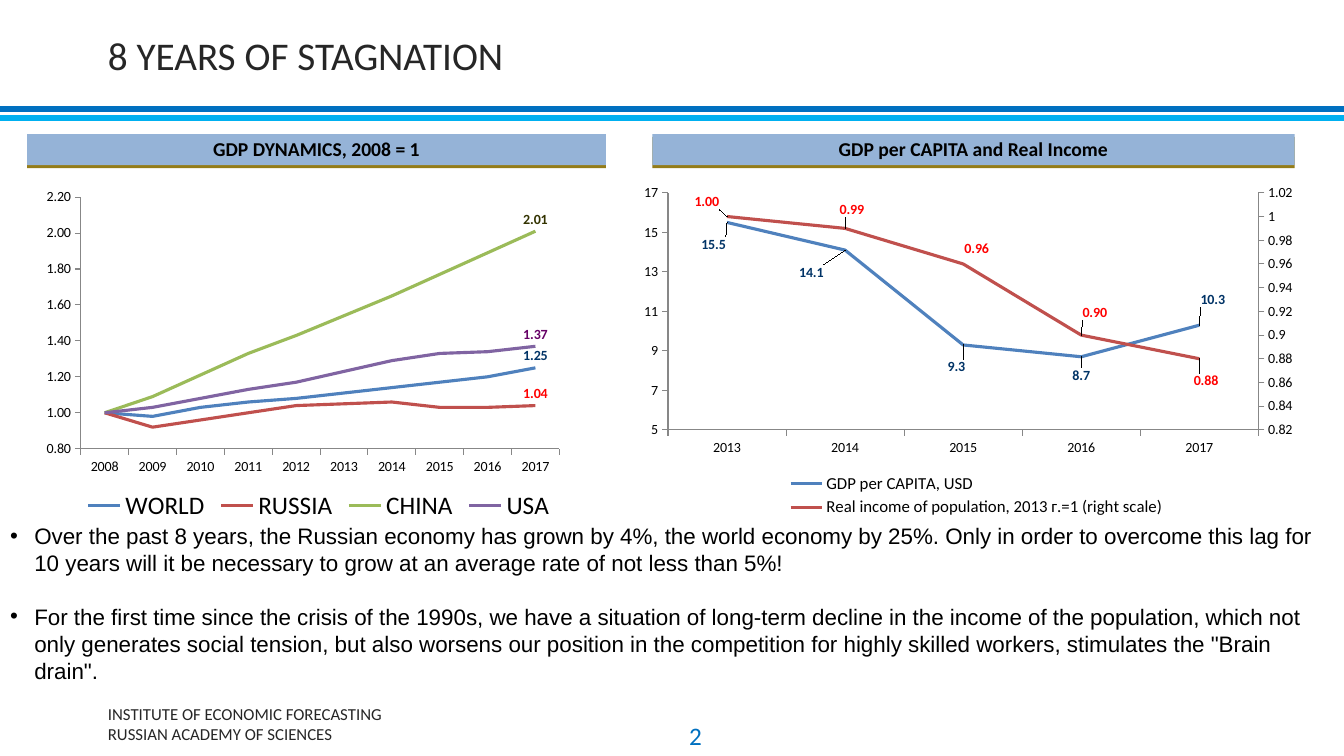
from copy import deepcopy
from dataclasses import dataclass

from lxml.etree import SubElement
from pptx import Presentation
from pptx.chart.data import CategoryChartData
from pptx.dml.color import RGBColor
from pptx.enum.chart import XL_CHART_TYPE, XL_LABEL_POSITION, XL_LEGEND_POSITION, XL_TICK_MARK
from pptx.enum.shapes import MSO_CONNECTOR, MSO_SHAPE
from pptx.enum.text import MSO_ANCHOR, PP_ALIGN
from pptx.oxml import parse_xml
from pptx.oxml.ns import qn
from pptx.util import Inches, Pt


@dataclass(frozen=True)
class Theme:
    heading_font: str = "Calibri"
    body_font: str = "Arial"
    ink: str = "000000"
    heading: str = "262626"
    rule: str = "0070C0"
    second_rule: str = "00B0F0"
    banner: str = "95B3D7"
    banner_edge: str = "947C18"
    axis: str = "878787"
    title_size: int = 28
    body_size: int = 16
    banner_size: int = 14
    footer_size: int = 12
    number_size: int = 18
    chart_size: int = 10


THEME = Theme()
ABOVE, BELOW = XL_LABEL_POSITION.ABOVE, XL_LABEL_POSITION.BELOW


@dataclass(frozen=True)
class Label:
    point: int
    position: XL_LABEL_POSITION = ABOVE
    shift_x: float = 0
    shift_y: float = 0


@dataclass(frozen=True)
class Line:
    name: str
    values: tuple
    color: str
    label_color: str
    labels: tuple
    number_format: str = "0.00"


@dataclass(frozen=True)
class Scale:
    minimum: float
    maximum: float
    step: float
    number_format: str = "General"


@dataclass(frozen=True)
class Panel:
    heading: str
    banner: tuple
    area: tuple
    plot: dict
    legend: dict | None
    legend_size: int
    first_year: int
    lines: tuple
    scale: Scale
    right_scale: Scale | None = None
    crossing: str = "between"


LAST_YEAR = (Label(9),)
PANELS = (
    Panel(
        "GDP DYNAMICS, 2008 = 1", (0.27, 1.33, 5.74, 0.31), (0.29, 1.78, 5.74, 3.44),
        dict(x=0.089, y=0.051, w=0.827, h=0.726), None, 18, 2008,
        (
            Line("WORLD", (1, 0.98, 1.03, 1.06, 1.08, 1.11, 1.14, 1.17, 1.2, 1.25), "4F81BD", "003366", LAST_YEAR),
            Line("RUSSIA", (1, 0.92, 0.96, 1, 1.04, 1.05, 1.06, 1.03, 1.03, 1.04), "C0504D", "FF0000", LAST_YEAR),
            Line("CHINA", (1, 1.09, 1.21, 1.33, 1.43, 1.54, 1.65, 1.77, 1.89, 2.01), "9BBB59", "333300", LAST_YEAR),
            Line("USA", (1, 1.03, 1.08, 1.13, 1.17, 1.23, 1.29, 1.33, 1.34, 1.37), "8064A2", "660066", LAST_YEAR),
        ),
        Scale(0.8, 2.2, 0.2, "0.00"), crossing="midCat",
    ),
    Panel(
        "GDP per CAPITA and Real Income", (6.47, 1.33, 6.37, 0.31), (6.27, 1.76, 6.7, 3.41),
        dict(x=0.053, y=0.045, w=0.874, h=0.69), dict(x=0.21, y=0.85, w=0.6, h=0.15), 12, 2013,
        (
            Line("GDP per CAPITA, USD", (15.5, 14.1, 9.3, 8.7, 10.3), "4F81BD", "003366",
                 (Label(0, BELOW, -0.02, 0.03), Label(1, BELOW, -0.05, 0.03), Label(2, BELOW, -0.01, 0.03),
                  Label(3, BELOW, 0, 0.02), Label(4, ABOVE, 0.02, -0.04)), "General"),
            Line("Real income of population, 2013 г.=1 (right scale)", (1, 0.99, 0.96, 0.9, 0.88), "C0504D", "FF0000",
                 (Label(0, ABOVE, -0.03, -0.01), Label(1, ABOVE, 0.01, -0.02), Label(2, ABOVE, 0.02, -0.01),
                  Label(3, ABOVE, 0.02, -0.03), Label(4, BELOW, 0.01, 0.03))),
        ),
        Scale(5, 17, 2), Scale(0.82, 1.02, 0.02),
    ),
)
BULLETS = (
    "Over the past 8 years, the Russian economy has grown by 4%, the world economy by 25%. Only in order to "
    "overcome this lag for 10 years will it be necessary to grow at an average rate of not less than 5%!",
    "For the first time since the crisis of the 1990s, we have a situation of long-term decline in the income of "
    "the population, which not only generates social tension, but also worsens our position in the competition for "
    "highly skilled workers, stimulates the \"Brain drain\".",
)


def format_font(font, size: float, color: str, name: str = THEME.heading_font, bold: bool = False) -> None:
    font.size, font.name, font.bold = Pt(size), name, bold
    font.color.rgb = RGBColor.from_string(color)


def write_text(box, text: str, *, size: float, color: str, font: str = THEME.heading_font, bold: bool = False,
               align=PP_ALIGN.LEFT, anchor=MSO_ANCHOR.MIDDLE, insets: tuple = (0, 0, 0, 0),
               bullet: bool = False, gap: float = 0) -> None:
    frame = box.text_frame
    frame.word_wrap, frame.vertical_anchor = True, anchor
    frame.margin_left, frame.margin_top, frame.margin_right, frame.margin_bottom = map(Inches, insets)
    frame.text = text
    for index, para in enumerate(frame.paragraphs):
        para.alignment, para.space_before = align, Pt(gap if index else 0)
        if bullet:
            properties = para._p.get_or_add_pPr()
            properties.set("marL", str(Inches(0.24)))
            properties.set("indent", str(-Inches(0.24)))
            SubElement(properties, qn("a:buChar"), char="•")
        for span in para.runs:
            format_font(span.font, size, color, font, bold)


def move(box, left: float, top: float, width: float, height: float) -> None:
    box.left, box.top, box.width, box.height = map(Inches, (left, top, width, height))


def add_rule(page, top: float, color: str) -> None:
    rule = page.shapes.add_connector(MSO_CONNECTOR.STRAIGHT, 0, Inches(top), Inches(13.33), Inches(top))
    rule.line.width, rule.line.color.rgb = Pt(4), RGBColor.from_string(color)
    SubElement(rule._element.spPr, qn("a:effectLst"))


def add_banner(page, panel: Panel) -> None:
    banner = page.shapes.add_shape(MSO_SHAPE.RECTANGLE, *map(Inches, panel.banner))
    banner.fill.solid()
    banner.fill.fore_color.rgb = RGBColor.from_string(THEME.banner)
    banner.line.fill.background()
    effects = SubElement(banner._element.spPr, qn("a:effectLst"))
    shadow = SubElement(effects, qn("a:outerShdw"), dist=str(Pt(2)), dir="5400000", algn="ctr", rotWithShape="0")
    SubElement(shadow, qn("a:srgbClr"), val=THEME.banner_edge)
    write_text(banner, panel.heading, size=THEME.banner_size, color=THEME.ink, bold=True,
               align=PP_ALIGN.CENTER, insets=(0.08, 0.03, 0.08, 0.05))


def set_layout(parent, index: int, settings: dict) -> None:
    for previous in parent.findall(qn("c:layout")):
        parent.remove(previous)
    layout = parse_xml('<c:layout xmlns:c="http://schemas.openxmlformats.org/drawingml/2006/chart"/>')
    manual = SubElement(layout, qn("c:manualLayout"))
    for key, value in settings.items():
        SubElement(manual, qn(f"c:{key}"), val=str(value))
    parent.insert(index, layout)


def format_line(series, line: Line) -> None:
    series.smooth = False
    series.format.line.width = Pt(2.25)
    series.format.line.color.rgb = RGBColor.from_string(line.color)
    series.data_labels.show_value = len(line.labels) == len(line.values)
    format_font(series.data_labels.font, THEME.chart_size, line.label_color, bold=True)
    for label in line.labels:
        data_label = series.points[label.point].data_label
        format_font(data_label.font, THEME.chart_size, line.label_color, bold=True)
        data_label.position = label.position
        element = series._element.xpath(f"c:dLbls/c:dLbl[c:idx/@val='{label.point}']")[0]
        set_layout(element, 1, dict(x=label.shift_x, y=label.shift_y))


def add_right_axis(plot_area, scale: Scale) -> None:
    left_plot = plot_area.find(qn("c:lineChart"))
    right_plot = deepcopy(left_plot)
    left_plot.remove(left_plot.findall(qn("c:ser"))[1])
    right_plot.remove(right_plot.find(qn("c:ser")))
    left_plot.addnext(right_plot)
    category, value = (plot_area.find(qn(f"c:{name}")) for name in ("catAx", "valAx"))
    right_category, right_value = deepcopy(category), deepcopy(value)
    value.addnext(right_value)
    right_value.addnext(right_category)
    for reference, number in zip(right_plot.findall(qn("c:axId")), ("5001", "5002")):
        reference.set("val", number)
    for axis, number, other in ((right_category, "5001", "5002"), (right_value, "5002", "5001")):
        axis.find(qn("c:axId")).set("val", number)
        axis.find(qn("c:crossAx")).set("val", other)
    right_category.find(qn("c:delete")).set("val", "1")
    for query, setting in (("c:axPos", "r"), ("c:crosses", "max"), ("c:scaling/c:min", scale.minimum),
                           ("c:scaling/c:max", scale.maximum), ("c:majorUnit", scale.step)):
        right_value.xpath(query)[0].set("val", str(setting))


def add_line_chart(page, panel: Panel) -> None:
    data = CategoryChartData()
    data.categories = [str(panel.first_year + index) for index in range(len(panel.lines[0].values))]
    for line in panel.lines:
        data.add_series(line.name, line.values, line.number_format)
    chart = page.shapes.add_chart(XL_CHART_TYPE.LINE, *map(Inches, panel.area), data).chart
    format_font(chart.font, THEME.chart_size, THEME.ink)
    chart.has_title = False
    chart.plots[0].vary_by_categories = False
    for series, line in zip(chart.plots[0].series, panel.lines):
        format_line(series, line)
    for axis in (chart.category_axis, chart.value_axis):
        axis.has_major_gridlines = False
        axis.major_tick_mark, axis.minor_tick_mark = XL_TICK_MARK.OUTSIDE, XL_TICK_MARK.NONE
        axis.format.line.color.rgb = RGBColor.from_string(THEME.axis)
        format_font(axis.tick_labels.font, THEME.chart_size, THEME.ink)
    axis, scale = chart.value_axis, panel.scale
    axis.minimum_scale, axis.maximum_scale, axis.major_unit = scale.minimum, scale.maximum, scale.step
    axis.tick_labels.number_format, axis.tick_labels.number_format_is_linked = scale.number_format, False
    plot_area = chart._chartSpace.chart.plotArea
    for crossing in plot_area.xpath("c:valAx/c:crossBetween"):
        crossing.set("val", panel.crossing)
    set_layout(plot_area, 0, dict(layoutTarget="inner", xMode="edge", yMode="edge") | panel.plot)
    chart.has_legend = True
    chart.legend.position, chart.legend.include_in_layout = XL_LEGEND_POSITION.BOTTOM, False
    format_font(chart.legend.font, panel.legend_size, THEME.ink)
    if panel.legend:
        set_layout(chart.legend._element, 1, dict(xMode="edge", yMode="edge") | panel.legend)
    if panel.right_scale:
        add_right_axis(plot_area, panel.right_scale)


def main() -> None:
    deck = Presentation()
    deck.slide_width, deck.slide_height = Inches(13.33), Inches(7.5)
    page = deck.slides.add_slide(deck.slide_layouts[1])
    add_rule(page, 1.08, THEME.rule)
    add_rule(page, 1.17, THEME.second_rule)
    title, body = page.shapes.title, page.placeholders[1]
    move(title, 1.07, 0, 10.88, 1.08)
    write_text(title, "8 YEARS OF STAGNATION", size=THEME.title_size, color=THEME.heading)
    move(body, 0, 5.13, 13.16, 1.72)
    write_text(body, "\n".join(BULLETS), size=THEME.body_size, color=THEME.ink, font=THEME.body_font,
               anchor=MSO_ANCHOR.TOP, insets=(0.1, 0.05, 0.1, 0.05), bullet=True, gap=19.3)
    footer = page.shapes.add_textbox(*map(Inches, (1.07, 6.98, 4.31, 0.4)))
    write_text(footer, "INSTITUTE OF ECONOMIC FORECASTING\nRUSSIAN ACADEMY OF SCIENCES",
               size=THEME.footer_size, color=THEME.heading)
    number = page.shapes.add_textbox(*map(Inches, (6.45, 7.1, 0.61, 0.4)))
    write_text(number, "2", size=THEME.number_size, color=THEME.rule, align=PP_ALIGN.RIGHT,
               insets=(0.1, 0.05, 0.1, 0.05))
    for panel in PANELS:
        add_banner(page, panel)
        add_line_chart(page, panel)
    deck.save("out.pptx")


if __name__ == "__main__":
    main()
